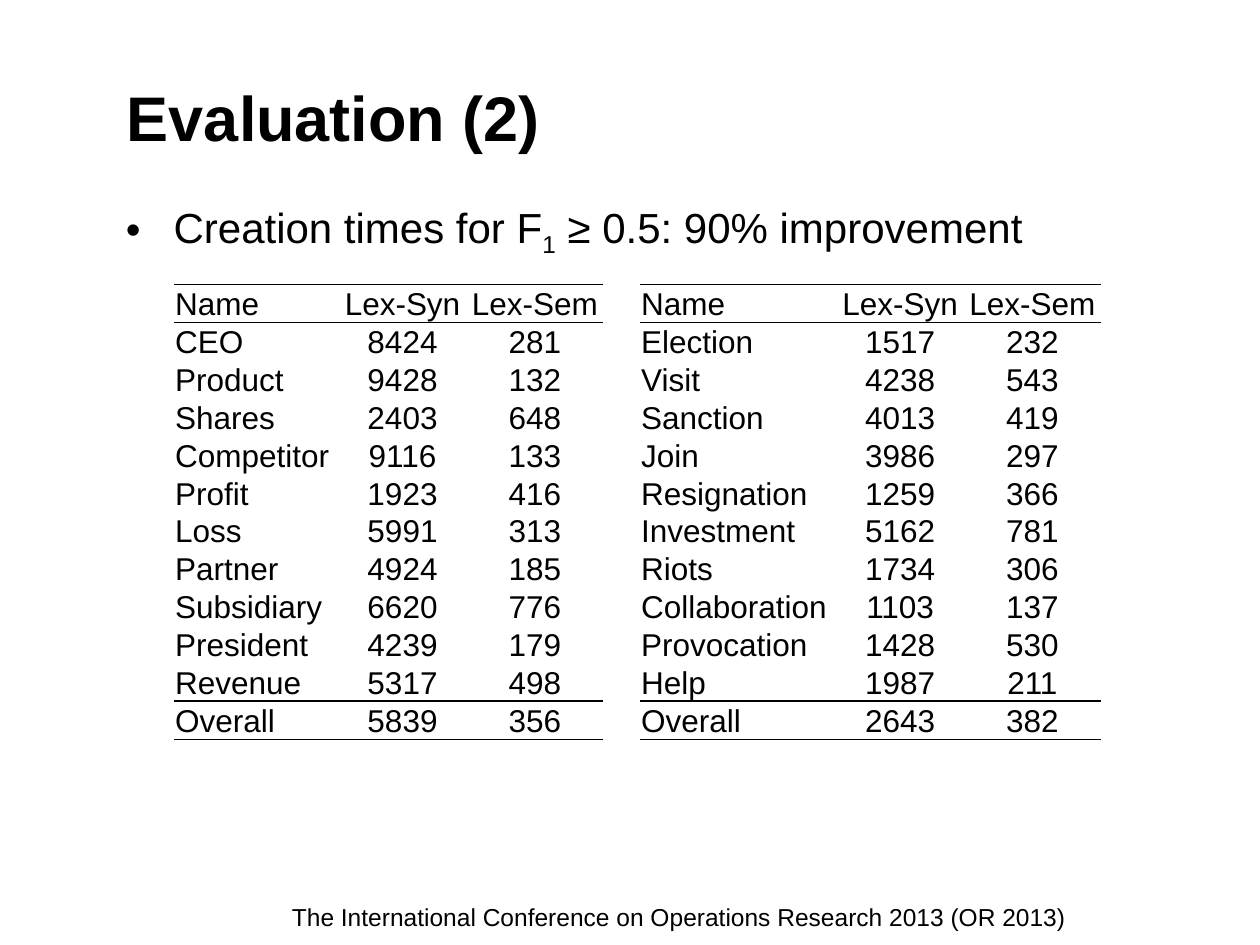
from lxml.etree import SubElement
from pptx import Presentation
from pptx.dml.color import RGBColor
from pptx.enum.text import MSO_ANCHOR as Anchor, PP_ALIGN as Align
from pptx.oxml.ns import qn
from pptx.util import Inches, Pt

COLORS = {"text": "000000", "rule": "000000"}
FONT = "Arial"
NO_STYLE = "{2D5ABB26-0587-4C30-8999-92F81FD0307C}"
ROW_HEIGHT = 0.29
COLUMN_WIDTHS = [1.31, 1.01, 1.09, 0.29, 1.56, 1.01, 1.09]
NAME_COLUMNS = (0, 4)
SPACER_COLUMN = 3
HEADER = ("Name", "Lex-Syn", "Lex-Sem")
LEFT_ROWS = [
    HEADER,
    ("CEO", 8424, 281),
    ("Product", 9428, 132),
    ("Shares", 2403, 648),
    ("Competitor", 9116, 133),
    ("Profit", 1923, 416),
    ("Loss", 5991, 313),
    ("Partner", 4924, 185),
    ("Subsidiary", 6620, 776),
    ("President", 4239, 179),
    ("Revenue", 5317, 498),
    ("Overall", 5839, 356),
]
RIGHT_ROWS = [
    HEADER,
    ("Election", 1517, 232),
    ("Visit", 4238, 543),
    ("Sanction", 4013, 419),
    ("Join", 3986, 297),
    ("Resignation", 1259, 366),
    ("Investment", 5162, 781),
    ("Riots", 1734, 306),
    ("Collaboration", 1103, 137),
    ("Provocation", 1428, 530),
    ("Help", 1987, 211),
    ("Overall", 2643, 382),
]


def add_run(paragraph, text, size, bold=False, baseline=0):
    """Append formatted text to a paragraph."""
    run = paragraph.add_run()
    run.text = text
    formats = {"name": FONT, "size": Pt(size), "bold": bold}
    for name, value in formats.items():
        setattr(run.font, name, value)
    run.font.color.rgb = RGBColor.from_string(COLORS["text"])
    if baseline:
        run._r.get_or_add_rPr().set("baseline", str(baseline * 1000))


def add_text_box(slide, box, anchor=Anchor.TOP, align=Align.LEFT):
    """Add a wrapping text box and return its first paragraph."""
    frame = slide.shapes.add_textbox(*map(Inches, box)).text_frame
    frame.word_wrap = True
    frame.vertical_anchor = anchor
    paragraph = frame.paragraphs[0]
    paragraph.alignment = align
    return paragraph


def add_bullet(paragraph, indent):
    """Give a paragraph a hanging round bullet."""
    properties = paragraph._p.get_or_add_pPr()
    properties.set("marL", str(Inches(indent)))
    properties.set("indent", str(-Inches(indent)))
    SubElement(properties, qn("a:buFont"), typeface=FONT)
    SubElement(properties, qn("a:buChar"), char="•")


def add_border(cell, side, width):
    """Draw a solid rule on one side of a cell, or none at width 0."""
    line = SubElement(cell._tc.get_or_add_tcPr(), qn(f"a:{side}"), w=str(Pt(width)))
    if width:
        fill = SubElement(line, qn("a:solidFill"))
        SubElement(fill, qn("a:srgbClr"), val=COLORS["rule"])
    else:
        SubElement(line, qn("a:noFill"))


def row_borders(row, last):
    """Return the widths of the top and bottom rules of a row."""
    widths = {0: (0.5, 0.5), 1: (0.5, 0), last - 1: (0, 1), last: (1, 0.5)}
    return widths.get(row, (0, 0))


def fill_cell(cell, text, align, borders):
    """Format one table cell and write its text."""
    formats = {
        "margin_left": Inches(0.01),
        "margin_right": Inches(0.01),
        "margin_top": 0,
        "margin_bottom": 0,
        "vertical_anchor": Anchor.BOTTOM,
    }
    for name, value in formats.items():
        setattr(cell, name, value)
    for side, width in zip(("lnT", "lnB"), borders):
        add_border(cell, side, width)
    cell.fill.background()
    paragraph = cell.text_frame.paragraphs[0]
    paragraph.alignment = align
    if text:
        add_run(paragraph, text, 18)
    else:
        SubElement(paragraph._p, qn("a:endParaRPr"), sz="1200")


def add_times_table(slide, left, top):
    """Add both lists of creation times as one table."""
    rows = [(*a, "", *b) for a, b in zip(LEFT_ROWS, RIGHT_ROWS)]
    size = (sum(COLUMN_WIDTHS), ROW_HEIGHT * len(rows))
    graphic = slide.shapes.add_table(
        len(rows), len(COLUMN_WIDTHS), *map(Inches, (left, top, *size)))
    table = graphic.table
    table.first_row = table.horz_banding = False
    for style in graphic._element.iter(qn("a:tableStyleId")):
        style.text = NO_STYLE
    for column, width in zip(table.columns, COLUMN_WIDTHS):
        column.width = Inches(width)
    for r, values in enumerate(rows):
        table.rows[r].height = Inches(ROW_HEIGHT)
        for c, value in enumerate(values):
            align = Align.LEFT if c in NAME_COLUMNS else Align.CENTER
            borders = (0, 0) if c == SPACER_COLUMN else row_borders(r, len(rows) - 1)
            fill_cell(table.cell(r, c), str(value), align, borders)


def main():
    """Build the evaluation slide."""
    presentation = Presentation()
    presentation.slide_width, presentation.slide_height = Inches(10), Inches(7.5)
    slide = presentation.slides.add_slide(presentation.slide_layouts[6])

    title = add_text_box(slide, (0.91, 0.3, 8.6, 1.25), Anchor.MIDDLE)
    add_run(title, "Evaluation (2)", 36, bold=True)

    body = add_text_box(slide, (0.9, 1.55, 8.6, 5.43))
    add_bullet(body, 0.38)
    add_run(body, "Creation times for F", 24)
    add_run(body, "1", 24, baseline=-25)
    add_run(body, " ≥ 0.5: 90% improvement", 24)

    footer = add_text_box(slide, (0.86, 7.11, 9.06, 0.24), align=Align.CENTER)
    add_run(footer, "The International Conference on Operations Research 2013 (OR 2013)", 14)

    add_times_table(slide, 1.38, 2.26)
    presentation.save("out.pptx")


if __name__ == "__main__":
    main()
